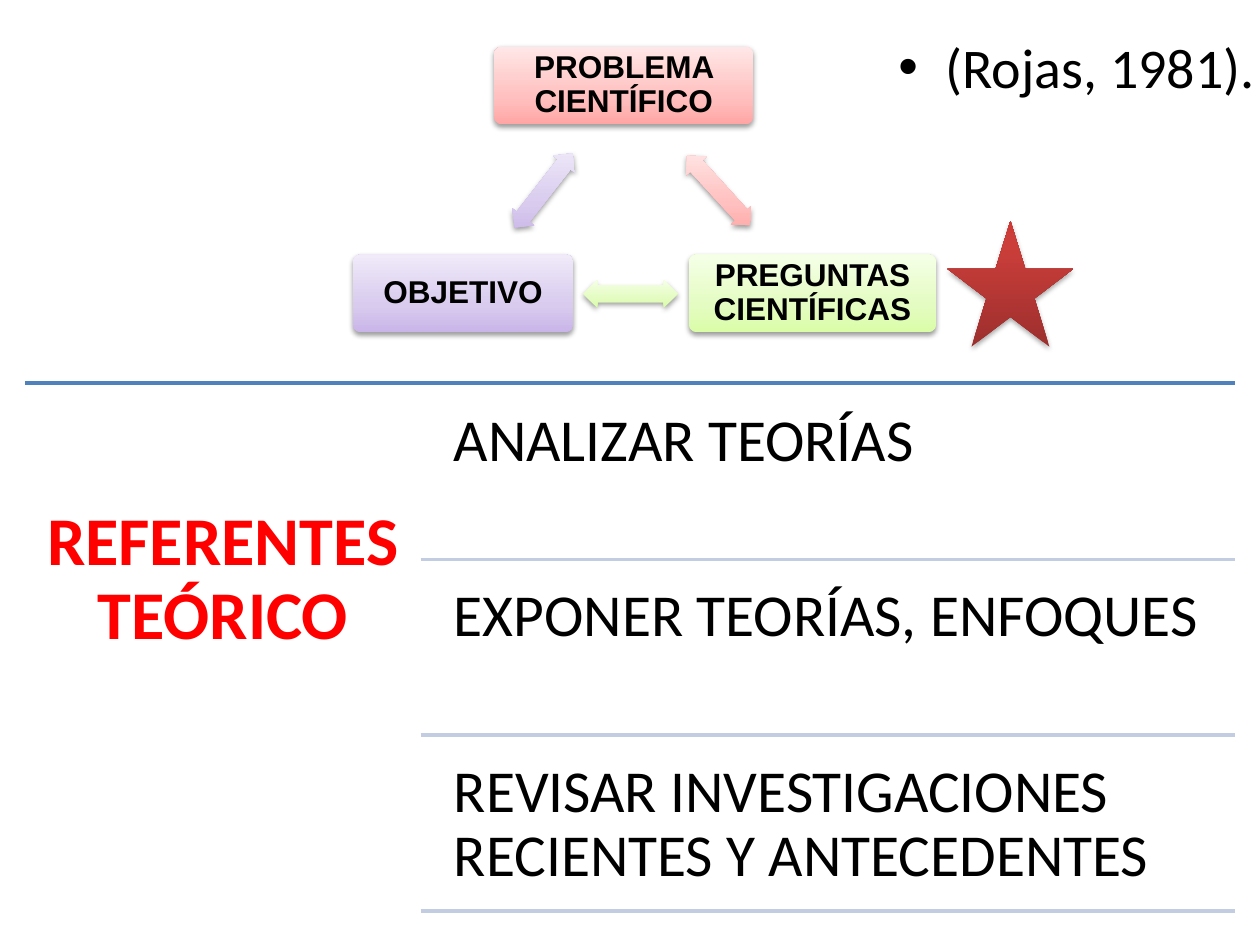
from lxml.etree import SubElement
from pptx import Presentation
from pptx.dml.color import RGBColor as RGB
from pptx.enum.shapes import MSO_CONNECTOR, MSO_SHAPE as SHAPE
from pptx.enum.text import MSO_ANCHOR as ANCHOR, PP_ALIGN as ALIGN
from pptx.oxml.ns import qn
from pptx.util import Cm, Pt

# Theme: gradients run from bottom to top as (position %, colour)
THEME = {
    "pink": [(0, "FFA6A5"), (35, "FFC0BF"), (100, "FFE7E7")],
    "green": [(0, "DAFDA7"), (35, "E4FCC2"), (100, "F5FFE7")],
    "purple": [(0, "C9B5E8"), (35, "D8CBEE"), (100, "F0EAF9")],
    "red": [(0, "9C2F2D"), (80, "CB3E3A"), (100, "CE3B37")],
    "rule": "4F81BD",
    "row_rule": "C2CDE1",
    "source": {"name": "Calibri", "size": Pt(32), "color": "000000"},
    "box": {"name": "Arial", "size": Pt(18), "bold": True, "color": "000000"},
    "heading": {"name": "Calibri", "size": Pt(39), "bold": True, "color": "FF0000"},
    "row": {"name": "Calibri", "size": Pt(34), "color": "000000"},
}

# Content, with lengths in cm
SOURCE = "(Rojas, 1981)."
BOXES = [  # text, left, top, width, gradient
    ("PROBLEMA CIENTÍFICO", 9.96, 0.94, 5.23, "pink"),
    ("PREGUNTAS CIENTÍFICAS", 13.89, 5.13, 4.98, "green"),
    ("OBJETIVO", 7.11, 5.13, 4.45, "purple"),
]
ARROWS = [  # left, top, rotation, gradient
    (13.54, 3.56, 47.6, "pink"),
    (11.76, 5.64, 180, "green"),
    (10.01, 3.56, 307.9, "purple"),
]
HEADING = "REFERENTES TEÓRICO"
ROWS = [
    "ANALIZAR TEORÍAS",
    "EXPONER TEORÍAS, ENFOQUES",
    "REVISAR INVESTIGACIONES RECIENTES Y ANTECEDENTES",
]
BOX_H, ARROW_W, ARROW_H = 1.57, 1.9, 0.56
LEFT, RIGHT, RULE_Y = 0.51, 24.89, 7.72
ROW_LINE_X, ROW_X, ROW_Y, ROW_H, ROW_PITCH = 8.48, 8.79, 7.9, 3.38, 3.54

prs = Presentation()
prs.slide_width, prs.slide_height = Cm(25.4), Cm(19.05)
s = prs.slides.add_slide(prs.slide_layouts[6])


def set_all(obj, **values):
    for name, value in values.items():
        setattr(obj, name, value)


def write(sp, text, style, inset, align=ALIGN.LEFT, anchor=ANCHOR.TOP, spacing=0.9):
    tf = sp.text_frame
    set_all(tf, word_wrap=True, vertical_anchor=anchor,
            **{f"margin_{side}": Cm(inset) for side in ("left", "top", "right", "bottom")})
    p = tf.paragraphs[0]
    set_all(p, alignment=align, line_spacing=spacing)
    r = p.add_run()
    r.text = text
    for name, value in THEME[style].items():
        if name == "color":
            r.font.color.rgb = RGB.from_string(value)
        else:
            setattr(r.font, name, value)
    return p


def text_box(x, y, w, h, *args, **kwargs):
    sp = s.shapes.add_textbox(Cm(x), Cm(y), Cm(w), Cm(h))
    return sp, write(sp, *args, **kwargs)


def shape(kind, x, y, w, h, gradient, alpha=38):
    sp = s.shapes.add_shape(kind, Cm(x), Cm(y), Cm(w), Cm(h))
    sp.line.fill.background()
    sp.fill.gradient()
    sp.fill.gradient_angle = 90
    # Three gradient stops that stay upright when the shape turns
    grad = sp._element.spPr.find(qn("a:gradFill"))
    grad.set("rotWithShape", "0")
    stops = grad.find(qn("a:gsLst"))
    stops.clear()
    for pos, color in THEME[gradient]:
        gs = SubElement(stops, qn("a:gs"), pos=str(pos * 1000))
        SubElement(gs, qn("a:srgbClr"), val=color)
    # Soft shadow below
    sp.shadow.inherit = False
    effects = sp._element.spPr.find(qn("a:effectLst"))
    shadow = SubElement(effects, qn("a:outerShdw"), blurRad=str(Pt(3.1)),
                        dist=str(Pt(1.6)), dir="5400000", rotWithShape="0")
    black = SubElement(shadow, qn("a:srgbClr"), val="000000")
    SubElement(black, qn("a:alpha"), val=str(alpha * 1000))
    return sp


def rule(x, y, color):
    ln = s.shapes.add_connector(MSO_CONNECTOR.STRAIGHT, Cm(x), Cm(y), Cm(RIGHT), Cm(y))
    ln.line.color.rgb = RGB.from_string(THEME[color])
    ln.line.width = Pt(2)
    SubElement(ln._element.spPr, qn("a:effectLst"))


# Bulleted source
_, p = text_box(2.57, 0.53, 22.86, 1.7, SOURCE, "source", 0.13, ALIGN.RIGHT, spacing=1.0)
p.space_before = Pt(6)
pPr = p._p.get_or_add_pPr()
pPr.set("marL", str(Cm(0.95)))
pPr.set("indent", str(Cm(-0.95)))
SubElement(pPr, qn("a:buFont"), typeface="Arial")
SubElement(pPr, qn("a:buChar"), char="•")

# Cycle of boxes and double arrows
for text, x, y, w, gradient in BOXES:
    sp = shape(SHAPE.ROUNDED_RECTANGLE, x, y, w, BOX_H, gradient)
    sp.adjustments[0] = 0.1
    write(sp, text, "box", 0.2, ALIGN.CENTER, ANCHOR.MIDDLE)
for x, y, angle, gradient in ARROWS:
    sp = shape(SHAPE.LEFT_RIGHT_ARROW, x, y, ARROW_W, ARROW_H, gradient)
    sp.adjustments[0], sp.adjustments[1] = 0.6, 0.5
    sp.rotation = angle

# Heading under the main rule
rule(LEFT, RULE_Y, "rule")
sp, _ = text_box(LEFT, RULE_Y, 7.97, 10.8, HEADING, "heading", 0.4, ALIGN.CENTER)
sp.text_frame.margin_top = Cm(2.5)

# Rows, each closed by a rule
for i, text in enumerate(ROWS):
    y = ROW_Y + i * ROW_PITCH
    text_box(ROW_X, y, RIGHT - ROW_X, ROW_H, text, "row", 0.36)
    rule(ROW_LINE_X, y + ROW_H, "row_rule")

# Star beside the questions
shape(SHAPE.STAR_5_POINT, 19.1, 4.45, 2.54, 2.54, "red", alpha=35)

prs.save("out.pptx")
